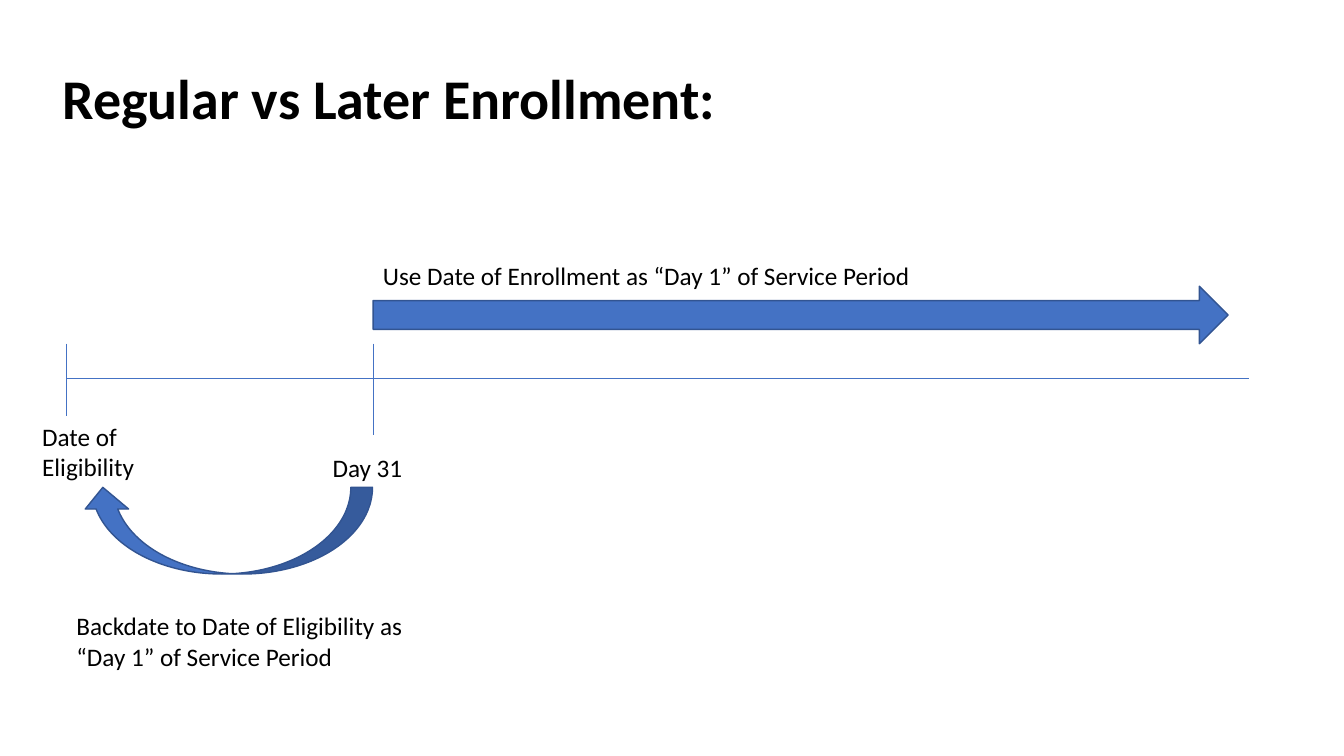
"""Build a slide with a timeline comparing regular and later enrollment."""
from lxml import etree
from pptx import Presentation
from pptx.dml.color import RGBColor
from pptx.enum.shapes import MSO_CONNECTOR, MSO_SHAPE
from pptx.enum.text import MSO_ANCHOR, MSO_AUTO_SIZE, PP_ALIGN
from pptx.oxml.ns import qn
from pptx.util import Inches, Pt

STRAIGHT = MSO_CONNECTOR.STRAIGHT
RIGHT_ARROW = MSO_SHAPE.RIGHT_ARROW
CURVED_ARROW = MSO_SHAPE.CURVED_LEFT_ARROW
TOP, MIDDLE, LEFT = MSO_ANCHOR.TOP, MSO_ANCHOR.MIDDLE, PP_ALIGN.LEFT
NO_AUTOFIT = MSO_AUTO_SIZE.NONE

COLORS = {"blue": "4472C4", "outline": "325491", "text": "000000"}
FONT = "Calibri"
SLIDE_WIDTH, SLIDE_HEIGHT = 13.33, 7.5

ELIGIBILITY_X, DAY_31_X, AXIS_END_X = 0.66, 3.7, 12.39
AXIS_Y = SLIDE_HEIGHT / 2
TICK_TOP = 3.41
ARROW_HEIGHT = 0.57
ONE_LINE, TWO_LINES = 0.4, 0.71


def color(name):
    return RGBColor.from_string(COLORS[name])


def write(shape, text, size, bold, anchor):
    frame = shape.text_frame
    frame.word_wrap = True
    frame.auto_size = NO_AUTOFIT
    frame.vertical_anchor = anchor
    frame.text = text
    paragraph = frame.paragraphs[0]
    paragraph.alignment = LEFT
    paragraph.font.name = FONT
    paragraph.font.size = Pt(size)
    paragraph.font.bold = bold
    paragraph.font.color.rgb = color("text")


presentation = Presentation()
presentation.slide_width = Inches(SLIDE_WIDTH)
presentation.slide_height = Inches(SLIDE_HEIGHT)
slide = presentation.slides.add_slide(presentation.slide_layouts[5])

title = slide.shapes.title
title.left, title.top = Inches(0.52), Inches(0.58)
title.width, title.height = Inches(7.36), Inches(0.77)
write(title, "Regular vs Later Enrollment:", 40, True, MIDDLE)

timeline = [
    (ELIGIBILITY_X, AXIS_Y, AXIS_END_X, AXIS_Y),
    (ELIGIBILITY_X, TICK_TOP, ELIGIBILITY_X, 4.13),
    (DAY_31_X, TICK_TOP, DAY_31_X, 4.32),
]
for ends in timeline:
    line = slide.shapes.add_connector(STRAIGHT, *map(Inches, ends))
    line.line.color.rgb = color("blue")
    line.line.width = Pt(0.5)
    etree.SubElement(line._element.spPr, qn("a:effectLst"))

arrows = [
    (RIGHT_ARROW, DAY_31_X, TICK_TOP - ARROW_HEIGHT, 8.48, ARROW_HEIGHT, 0),
    (CURVED_ARROW, 1.82, 3.82, 0.86, 2.89, 90),
]
for kind, left, top, width, height, rotation in arrows:
    arrow = slide.shapes.add_shape(kind, *map(Inches, (left, top, width, height)))
    arrow.rotation = rotation
    arrow.shadow.inherit = False
    arrow.fill.solid()
    arrow.fill.fore_color.rgb = color("blue")
    arrow.line.color.rgb = color("outline")
    arrow.line.width = Pt(1)

labels = [
    ("Date of Eligibility", 0.32, 4.13, 1.41, TWO_LINES),
    ("Day 31", DAY_31_X - 0.5, 4.44, 1, ONE_LINE),
    ("Use Date of Enrollment as “Day 1” of Service Period", DAY_31_X, 2.53, 6.27, ONE_LINE),
    ("Backdate to Date of Eligibility as “Day 1” of Service Period",
     ELIGIBILITY_X, 6.01, 3.54, TWO_LINES),
]
for text, *box in labels:
    label = slide.shapes.add_textbox(*map(Inches, box))
    write(label, text, 18, False, TOP)

presentation.save("out.pptx")
